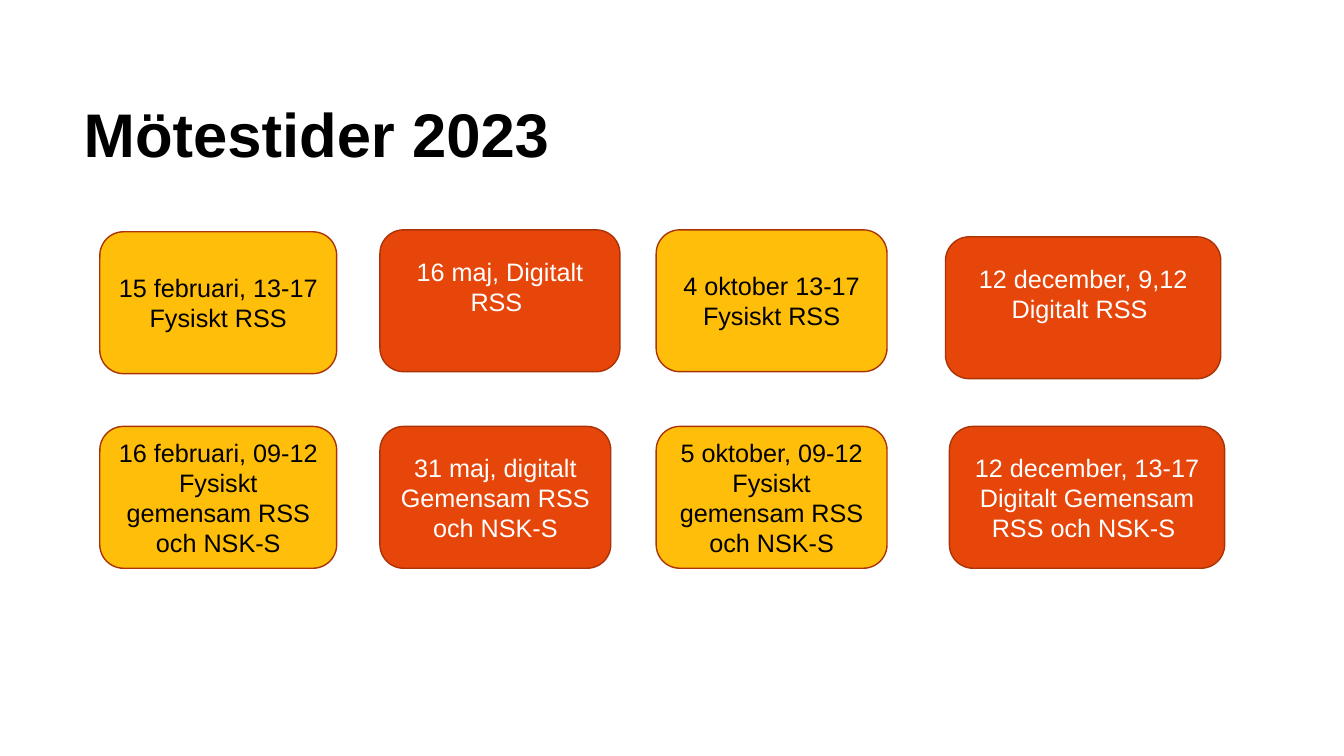
from pptx import Presentation
from pptx.dml.color import RGBColor
from pptx.enum.shapes import MSO_SHAPE
from pptx.enum.text import MSO_ANCHOR, MSO_AUTO_SIZE, PP_ALIGN
from pptx.util import Pt

ROUNDED = MSO_SHAPE.ROUNDED_RECTANGLE
TOP, MIDDLE = MSO_ANCHOR.TOP, MSO_ANCHOR.MIDDLE
NO_FIT = MSO_AUTO_SIZE.NONE
LEFT, CENTER = PP_ALIGN.LEFT, PP_ALIGN.CENTER

BLACK = RGBColor(0x00, 0x00, 0x00)
WHITE = RGBColor(0xFF, 0xFF, 0xFF)
YELLOW = RGBColor(0xFF, 0xBE, 0x0A)
ORANGE = RGBColor(0xE6, 0x46, 0x0A)
RUST = RGBColor(0xAA, 0x34, 0x07)

PHYSICAL = (YELLOW, BLACK)
DIGITAL = (ORANGE, WHITE)
CARD_HEIGHT = 101.3
SECOND_ROW = 304.6
CENTERED = 3.6
RAISED = 24

MEETINGS = [
    (71.3, 165.6, 169.2, PHYSICAL, ["15 februari, 13-17 Fysiskt RSS"], CENTERED),
    (271.4, 164.2, 171.4, DIGITAL, ["16 maj, Digitalt RSS "], RAISED),
    (468.7, 164.2, 164.9, PHYSICAL, ["4 oktober 13-17 Fysiskt RSS"], CENTERED),
    (675.4, 169.2, 196.6, DIGITAL, ["12 december, 9,12 Digitalt RSS "], RAISED),
    (71.3, SECOND_ROW, 169.2, PHYSICAL,
     ["16 februari, 09-12 Fysiskt gemensam RSS och NSK-S"], CENTERED),
    (271.4, SECOND_ROW, 164.9, DIGITAL,
     ["31 maj, digitalt Gemensam RSS och NSK-S"], CENTERED),
    (468.7, SECOND_ROW, 164.9, PHYSICAL,
     ["5 oktober, 09-12 Fysiskt gemensam RSS och NSK-S"], CENTERED),
    (678.2, SECOND_ROW, 196.6, DIGITAL,
     ["12 december, 13-17", "Digitalt Gemensam RSS och NSK-S "], CENTERED),
]


def apply_values(target, values):
    for name, value in values.items():
        setattr(target, name, value)


class SlideBuilder:
    font_name = "Arial"

    def __init__(self, slide):
        self.slide = slide

    def set_text(self, shape, lines, size, color, frame, bold=False, **layout):
        text_frame = shape.text_frame
        apply_values(text_frame,
                     {"word_wrap": True, "auto_size": NO_FIT, **frame})
        text_frame.text = "\n".join(lines)
        for paragraph in text_frame.paragraphs:
            apply_values(paragraph, layout)
            apply_values(paragraph.font,
                         {"name": self.font_name, "size": Pt(size), "bold": bold})
            paragraph.font.color.rgb = color

    def title(self, text, left, top, width, height):
        shape = self.slide.shapes.title
        apply_values(shape, {"left": Pt(left), "top": Pt(top),
                             "width": Pt(width), "height": Pt(height)})
        self.set_text(shape, [text], 44, BLACK, {"vertical_anchor": TOP},
                      bold=True, alignment=LEFT, line_spacing=0.95)

    def card(self, left, top, width, colors, lines, bottom_margin):
        fill_color, text_color = colors
        shape = self.slide.shapes.add_shape(
            ROUNDED, Pt(left), Pt(top), Pt(width), Pt(CARD_HEIGHT))
        shape.shadow.inherit = False
        shape.fill.solid()
        shape.fill.fore_color.rgb = fill_color
        shape.line.color.rgb = RUST
        shape.line.width = Pt(1)
        frame = {"vertical_anchor": MIDDLE, "margin_bottom": Pt(bottom_margin)}
        self.set_text(shape, lines, 18, text_color, frame, alignment=CENTER)


def main():
    presentation = Presentation()
    presentation.slide_width = Pt(960)
    presentation.slide_height = Pt(540)
    builder = SlideBuilder(
        presentation.slides.add_slide(presentation.slide_layouts[5]))
    builder.title("Mötestider 2023", 52.6, 69.1, 756.7, 97.2)
    for meeting in MEETINGS:
        builder.card(*meeting)
    presentation.save("out.pptx")


if __name__ == "__main__":
    main()
